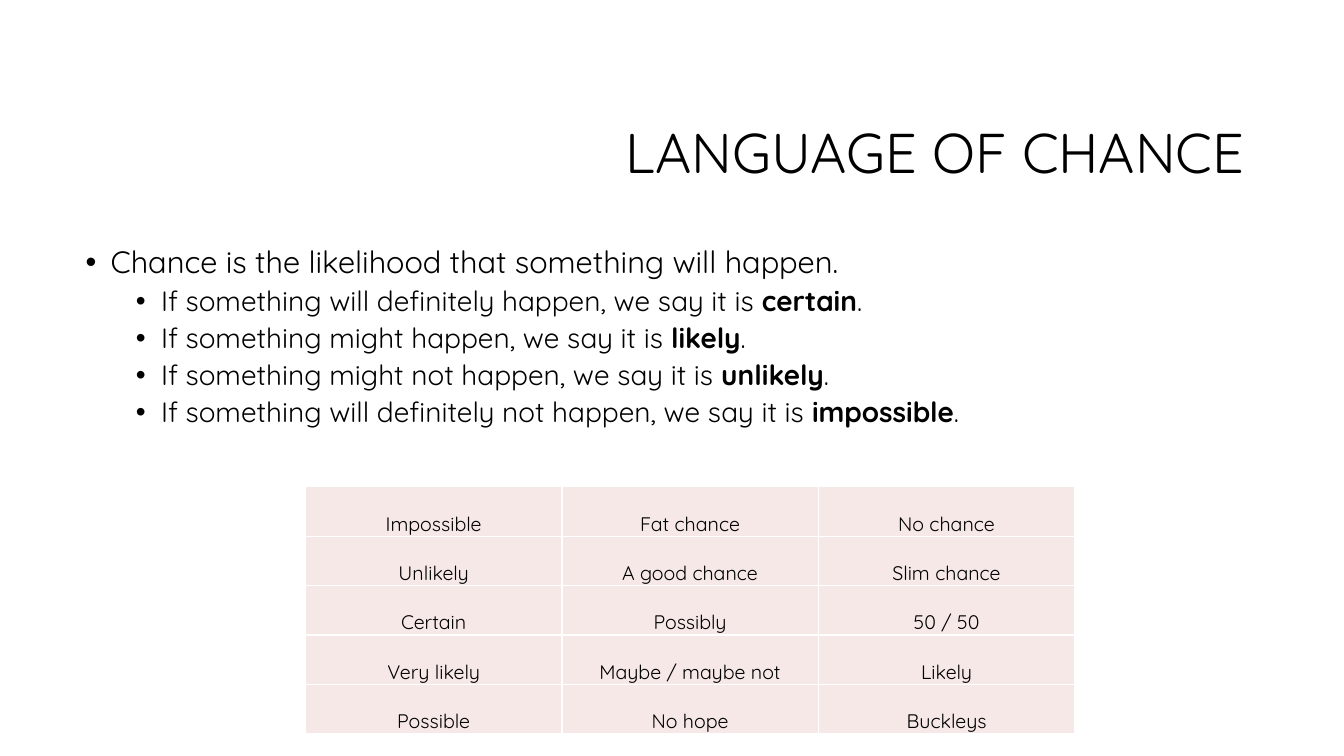
from lxml import etree
from pptx import Presentation
from pptx import util as u
from pptx.dml import color
from pptx.enum import text
from pptx.oxml import ns

COLORS = {"ink": "000000", "cell": "F5E8E7", "border": "FFFFFF"}
FONT = "Quicksand"

presentation = Presentation()
presentation.slide_width = u.Inches(13.33)
presentation.slide_height = u.Inches(7.5)
slide = presentation.slides.add_slide(presentation.slide_layouts[6])


def add_run(paragraph, wording, size, bold=False):
    run = paragraph.add_run()
    run.text = wording
    for name, value in {"name": FONT, "size": u.Pt(size), "bold": bold}.items():
        setattr(run.font, name, value)
    run.font.color.rgb = color.RGBColor.from_string(COLORS["ink"])


def add_text_frame(left, top, width, height, anchor):
    box = slide.shapes.add_textbox(*map(u.Inches, (left, top, width, height)))
    frame = box.text_frame
    frame.word_wrap = True
    frame.vertical_anchor = anchor
    return frame


title = add_text_frame(3.17, 0.84, 9.42, 1.41, text.MSO_ANCHOR.MIDDLE).paragraphs[0]
title.alignment = text.PP_ALIGN.RIGHT
title.line_spacing = 0.9
add_run(title, "LANGUAGE OF CHANCE ", 40)

body = add_text_frame(0.75, 2.4, 11.83, 4.4, text.MSO_ANCHOR.TOP)
meanings = [
    ("will definitely happen", "certain"),
    ("might happen", "likely"),
    ("might not happen", "unlikely"),
    ("will definitely not happen", "impossible"),
]
bullets = [(0, 22, [("Chance is the likelihood that something will happen.", False)])]
for outcome, word in meanings:
    sentence = [(f"If something {outcome}, we say it is ", False), (word, True), (".", False)]
    bullets.append((1, 20, sentence))

for index, (level, size, parts) in enumerate(bullets):
    paragraph = body.add_paragraph() if index else body.paragraphs[0]
    properties = paragraph._p.get_or_add_pPr()
    properties.set("marL", str(u.Inches(0.25 + 0.5 * level)))
    properties.set("indent", str(u.Inches(-0.25)))
    etree.SubElement(properties, ns.qn("a:buFont"), typeface="Arial")
    etree.SubElement(properties, ns.qn("a:buChar"), char="•")
    spacing = {"level": level, "line_spacing": 0.9, "space_before": u.Pt(5 if index else 0)}
    for name, value in spacing.items():
        setattr(paragraph, name, value)
    for wording, bold in parts:
        add_run(paragraph, wording, size, bold)

phrases = [
    ["Impossible", "Fat chance", "No chance"],
    ["Unlikely", "A good chance", "Slim chance"],
    ["Certain", "Possibly", "50 / 50"],
    ["Very likely", "Maybe / maybe not", "Likely"],
    ["Possible", "No hope", "Buckleys"],
]
row_height = 0.49
cell_format = {
    "margin_left": u.Inches(0.07),
    "margin_right": u.Inches(0.07),
    "margin_top": 0,
    "margin_bottom": 0,
    "vertical_anchor": text.MSO_ANCHOR.TOP,
}
table = slide.shapes.add_table(
    len(phrases),
    len(phrases[0]),
    u.Inches(3.03),
    u.Inches(4.83),
    u.Inches(7.63),
    u.Inches(row_height * len(phrases)),
).table
for row, row_phrases in enumerate(phrases):
    for column, phrase in enumerate(row_phrases):
        cell = table.cell(row, column)
        for name, value in cell_format.items():
            setattr(cell, name, value)
        paragraph = cell.text_frame.paragraphs[0]
        paragraph.alignment = text.PP_ALIGN.CENTER
        paragraph.line_spacing = 2.0
        add_run(paragraph, phrase, 14)
        properties = cell._tc.get_or_add_tcPr()
        for side in ("lnL", "lnR", "lnT", "lnB"):
            line = etree.SubElement(properties, ns.qn(f"a:{side}"), w=str(u.Pt(1)))
            fill = etree.SubElement(line, ns.qn("a:solidFill"))
            etree.SubElement(fill, ns.qn("a:srgbClr"), val=COLORS["border"])
        cell.fill.solid()
        cell.fill.fore_color.rgb = color.RGBColor.from_string(COLORS["cell"])

presentation.save("out.pptx")
